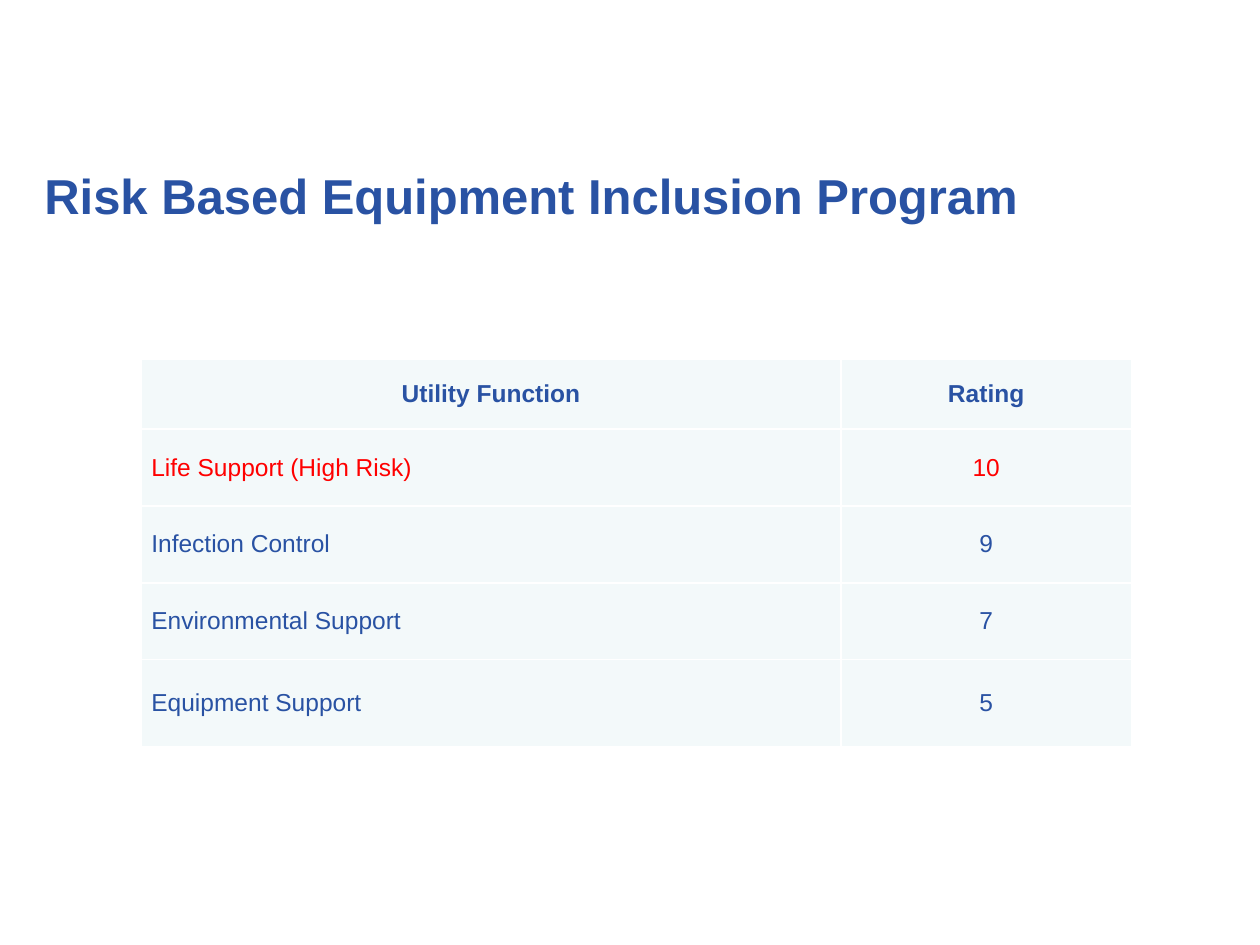
from pptx import Presentation
from pptx.dml.color import RGBColor
from pptx.enum.text import MSO_ANCHOR, MSO_AUTO_SIZE, PP_ALIGN
from pptx.oxml import parse_xml
from pptx.oxml.ns import nsdecls
from pptx.util import Cm, Pt

COLORS = {"blue": "2952A3", "red": "FF0000", "cell": "F3F9FA", "border": "FFFFFF"}
HEADERS = ("Utility Function", "Rating")
RATINGS = [
    ("Life Support (High Risk)", "10"),
    ("Infection Control", "9"),
    ("Environmental Support", "7"),
    ("Equipment Support", "5"),
]
HIGH_RISK_ROW = 1


class SlideBuilder:
    font_name = "Arial"

    def __init__(self, slide):
        self.slide = slide

    def add_text(self, paragraph, text, size, color="blue", bold=False, align=PP_ALIGN.LEFT):
        paragraph.alignment = align
        run = paragraph.add_run()
        run.text = text
        run.font.name = self.font_name
        run.font.size = Pt(size)
        run.font.bold = bold
        run.font.color.rgb = RGBColor.from_string(COLORS[color])

    def title(self, text, left, top, width, height):
        shape = self.slide.shapes.title
        shape.left, shape.top = Cm(left), Cm(top)
        shape.width, shape.height = Cm(width), Cm(height)
        frame = shape.text_frame
        frame.word_wrap = True
        frame.auto_size = MSO_AUTO_SIZE.SHAPE_TO_FIT_TEXT
        frame.vertical_anchor = MSO_ANCHOR.MIDDLE
        self.add_text(frame.paragraphs[0], text, 28, bold=True)

    def style_cell(self, cell):
        properties = cell._tc.get_or_add_tcPr()
        for side in ("lnL", "lnR", "lnT", "lnB"):
            properties.append(parse_xml(
                f'<a:{side} {nsdecls("a")} w="{Pt(1)}"><a:solidFill>'
                f'<a:srgbClr val="{COLORS["border"]}"/></a:solidFill></a:{side}>'
            ))
        cell.fill.solid()
        cell.fill.fore_color.rgb = RGBColor.from_string(COLORS["cell"])
        cell.vertical_anchor = MSO_ANCHOR.MIDDLE
        cell.margin_left = cell.margin_right = Cm(0.2)
        cell.margin_top = cell.margin_bottom = 0

    def table(self, rows, left, top, column_widths, row_heights):
        table = self.slide.shapes.add_table(
            len(rows), len(column_widths), Cm(left), Cm(top),
            Cm(sum(column_widths)), Cm(sum(row_heights)),
        ).table
        for column, width in zip(table.columns, column_widths):
            column.width = Cm(width)
        for row, height in zip(table.rows, row_heights):
            row.height = Cm(height)
        for row_index, values in enumerate(rows):
            is_header = row_index == 0
            color = "red" if row_index == HIGH_RISK_ROW else "blue"
            for column_index, text in enumerate(values):
                cell = table.cell(row_index, column_index)
                self.style_cell(cell)
                centred = is_header or column_index > 0
                align = PP_ALIGN.CENTER if centred else PP_ALIGN.LEFT
                self.add_text(cell.text_frame.paragraphs[0], text, 14, color, is_header, align)


def main():
    presentation = Presentation()
    presentation.slide_width, presentation.slide_height = Cm(25.4), Cm(19.05)
    slide = presentation.slides.add_slide(presentation.slide_layouts.get_by_name("Title Only"))
    builder = SlideBuilder(slide)
    builder.table([HEADERS, *RATINGS], 2.85, 7.25, (14.1, 5.86), (1.4, 1.55, 1.55, 1.55, 1.75))
    builder.title("Risk Based Equipment Inclusion Program", 0.64, 3.2, 24.36, 1.45)
    presentation.save("out.pptx")


if __name__ == "__main__":
    main()
